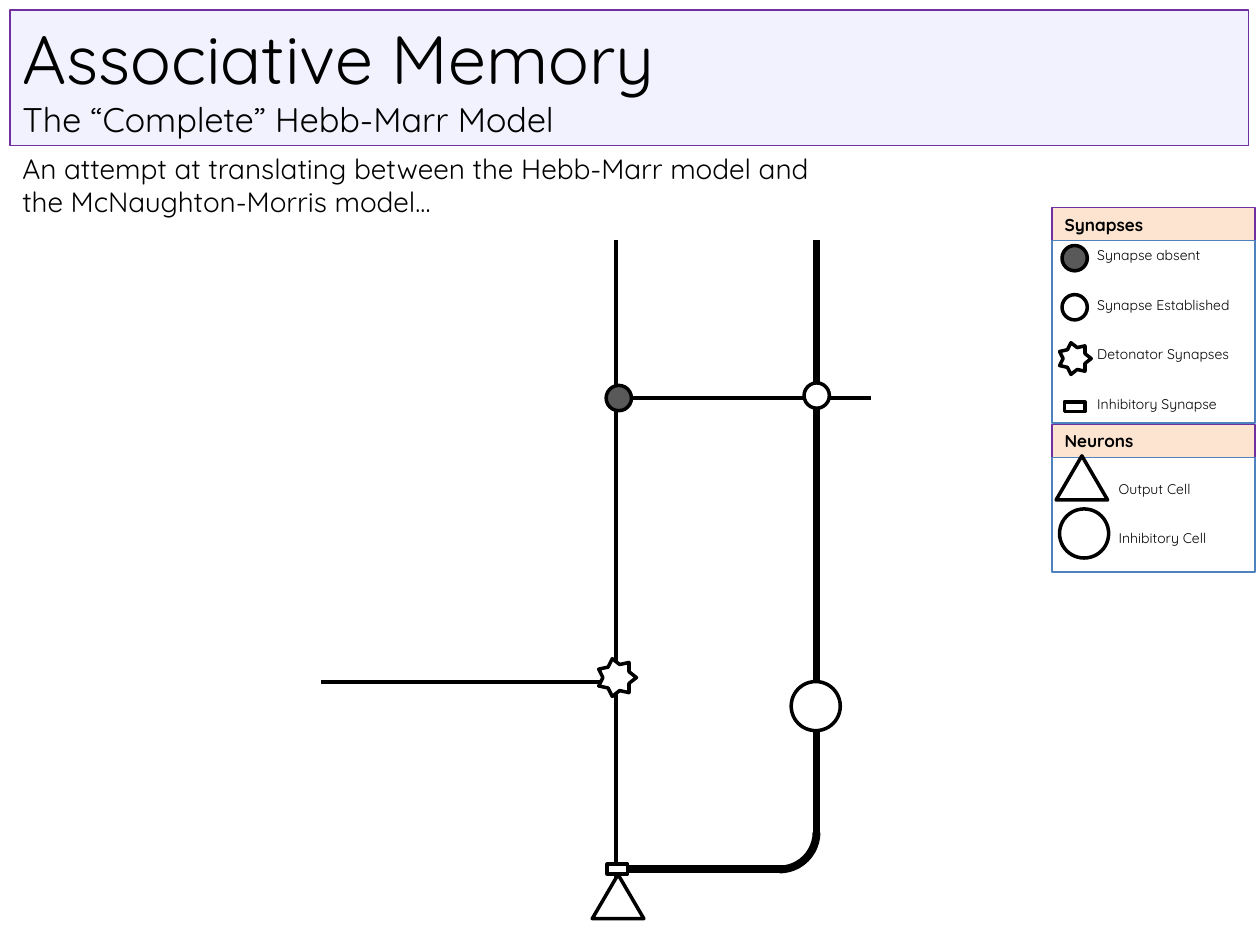
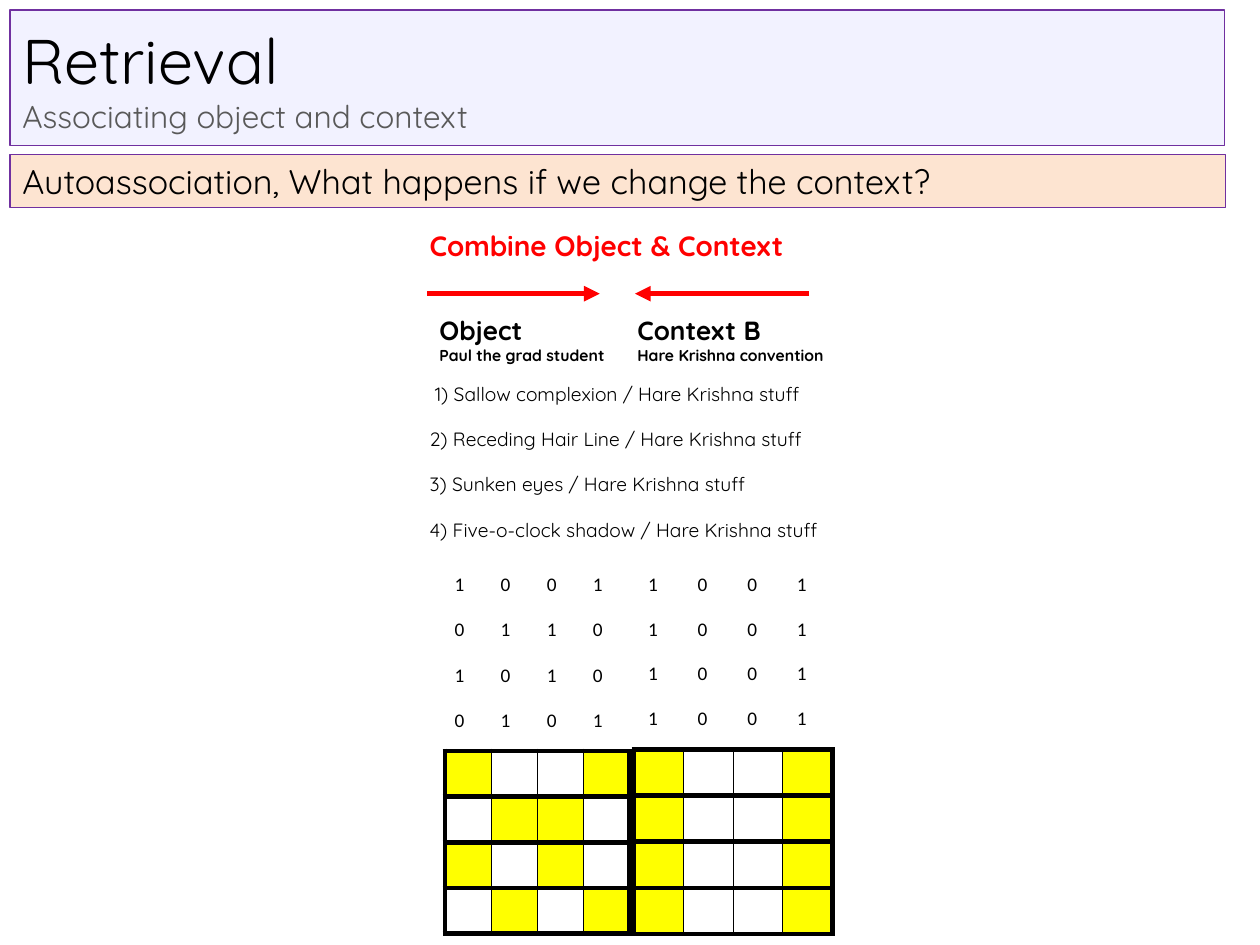
from lxml import etree
from pptx import Presentation
from pptx.dml.color import RGBColor
from pptx.enum.shapes import MSO_CONNECTOR, MSO_SHAPE
from pptx.enum.text import MSO_ANCHOR, PP_ALIGN
from pptx.oxml.ns import qn
from pptx.util import Cm, Pt

BLACK = RGBColor(0x00, 0x00, 0x00)
WHITE = RGBColor(0xFF, 0xFF, 0xFF)
GREY = RGBColor(0x59, 0x59, 0x59)
RED = RGBColor(0xFF, 0x00, 0x00)
YELLOW = RGBColor(0xFF, 0xFF, 0x00)
PURPLE = RGBColor(0x70, 0x30, 0xA0)
BLUE = RGBColor(0x4F, 0x81, 0xBD)
LAVENDER = RGBColor(0xF2, 0xF2, 0xFF)
PEACH = RGBColor(0xFD, 0xE4, 0xD1)
FONT = "Quicksand"
DIGIT_FONT = "Calibri"

RECTANGLE = MSO_SHAPE.RECTANGLE
ELLIPSE = MSO_SHAPE.OVAL
STAR = MSO_SHAPE.STAR_7_POINT
TRIANGLE = MSO_SHAPE.ISOSCELES_TRIANGLE
ARC = MSO_SHAPE.ARC
STRAIGHT = MSO_CONNECTOR.STRAIGHT
TOP, MIDDLE, BOTTOM = MSO_ANCHOR.TOP, MSO_ANCHOR.MIDDLE, MSO_ANCHOR.BOTTOM
LEFT, RIGHT = PP_ALIGN.LEFT, PP_ALIGN.RIGHT


def draw(page, kind, place, fill, line, width):
    """Add a preset shape; place is left, top, width, height in cm."""
    shape = page.shapes.add_shape(kind, *map(Cm, place))
    shape.shadow.inherit = False
    if fill is None:
        shape.fill.background()
    else:
        shape.fill.solid()
        shape.fill.fore_color.rgb = fill
    shape.line.color.rgb = line
    shape.line.width = Pt(width)
    return shape


def write(frame, lines, frame_format, gap=0):
    """Fill a frame with (text, size, colour, bold) lines, gap points apart."""
    for name, value in {"word_wrap": True, **frame_format}.items():
        setattr(frame, name, value)
    for index, (text, size, colour, bold) in enumerate(lines):
        para = frame.add_paragraph() if index else frame.paragraphs[0]
        para.alignment = LEFT
        if index:
            para.space_before = Pt(gap)
        span = para.add_run()
        span.text = text
        span.font.color.rgb = colour
        for name, value in {"name": FONT, "size": Pt(size), "bold": bold}.items():
            setattr(span.font, name, value)


deck = Presentation()
deck.slide_width, deck.slide_height = Cm(25.4), Cm(19.05)
memory_page, retrieval_page = [
    deck.slides.add_slide(deck.slide_layouts[6]) for _ in range(2)]

# Axons, dendrites and the two arrows: x1, y1, x2, y2 in cm
connectors = {}
for name, page, ends, colour, width in [
    ("dendrite", memory_page, (12.42, 18.03, 12.42, 4.83), BLACK, 2.25),
    ("upper axon", memory_page, (17.55, 8.03, 12.22, 8.03), BLACK, 2.25),
    ("detonator axon", memory_page, (14.42 - 2, 13.74, 6.48, 13.74), BLACK, 2.25),
    ("inhibitory axon", memory_page, (16.46, 4.83, 16.46, 16.84), BLACK, 4.5),
    ("inhibitory output", memory_page, (12.65, 17.52, 15.8, 17.52), BLACK, 4.5),
    ("object arrow", retrieval_page, (8.61, 5.92, 12.09, 5.92), RED, 3),
    ("context arrow", retrieval_page, (16.31, 5.92, 12.8, 5.92), RED, 3),
]:
    connector = page.shapes.add_connector(STRAIGHT, *map(Cm, ends))
    connector.line.color.rgb = colour
    connector.line.width = Pt(width)
    properties = connector.element.spPr
    if name.endswith("arrow"):
        etree.SubElement(properties.find(qn("a:ln")), qn("a:tailEnd"), type="triangle")
    etree.SubElement(properties, qn("a:effectLst"))
    connectors[name] = connector

# Title bands, the question band and the legend headings
for page, place, fill, lines in [
    (memory_page, (0.2, 0.2, 24.97, 2.74), LAVENDER,
     [("Associative Memory", 39, BLACK, False),
      ("The “Complete” Hebb-Marr Model", 19.5, BLACK, False)]),
    (retrieval_page, (0.2, 0.2, 24.49, 2.74), LAVENDER,
     [("Retrieval", 36, BLACK, False),
      ("Associating object and context", 18, GREY, False)]),
    (retrieval_page, (0.2, 3.12, 24.51, 1.07), PEACH,
     [("Autoassociation, What happens if we change the context?", 19.5, BLACK, False)]),
    (memory_page, (21.21, 4.19, 4.09, 0.66), PEACH, [("Synapses", 9.8, BLACK, True)]),
    (memory_page, (21.21, 8.56, 4.09, 0.66), PEACH, [("Neurons", 9.8, BLACK, True)]),
]:
    band = draw(page, RECTANGLE, place, fill, PURPLE, 0.75)
    write(band.text_frame, lines, {"vertical_anchor": MIDDLE})

# Legend boxes
for place, left_inset, top_inset, entries in [
    ((21.21, 4.85, 4.09, 3.68), 0.91, 0.13,
     ["Synapse absent", "Synapse Established", "Detonator Synapses",
      "Inhibitory Synapse"]),
    ((21.21, 9.22, 4.09, 2.31), 1.34, 0.46, ["Output Cell", "Inhibitory Cell"]),
]:
    legend = draw(memory_page, RECTANGLE, place, None, BLUE, 0.75)
    write(legend.text_frame, [(entry, 8, BLACK, False) for entry in entries],
          {"vertical_anchor": TOP, "margin_left": Cm(left_inset),
           "margin_top": Cm(top_inset)}, gap=18.7)

# Bend of the inhibitory axon
bend = draw(memory_page, ARC, (14.96, 16.03, 1.5, 1.5), None, BLACK, 4.5)
bend.rotation = 90

# Each symbol stands once in the circuit and once in the legend
for kind, fill, width, height, in_circuit, in_legend, legend_scale in [
    (ELLIPSE, GREY, 0.51, 0.51, (12.22, 7.77), (21.41, 4.95), 1),
    (ELLIPSE, WHITE, 0.51, 0.51, (16.21, 7.72), (21.41, 5.94), 1),
    (STAR, WHITE, 0.76, 0.76, (12.07, 13.28), (21.36, 6.91), 0.84),
    (TRIANGLE, WHITE, 1.04, 0.89, (11.94, 17.63), (21.29, 9.19), 1),
    (ELLIPSE, WHITE, 0.99, 0.99, (15.95, 13.74), (21.36, 10.26), 1),
    (RECTANGLE, WHITE, 0.41, 0.2, (12.24, 17.42), (21.46, 8.1), 1),
]:
    for spot, scale in [(in_circuit, 1), (in_legend, legend_scale)]:
        symbol = draw(memory_page, kind, (*spot, width * scale, height * scale),
                      fill, BLACK, 2)
        if kind == STAR:
            symbol.rotation = 90
        if kind == RECTANGLE and spot == in_circuit:
            connectors["inhibitory output"].begin_connect(symbol, 3)

# Free text
for page, place, anchor, top_inset, gap, lines in [
    (memory_page, (0.2, 2.92, 16.99, 1.63), TOP, 0.13, 0,
     [("An attempt at translating between the Hebb-Marr model and "
       "the McNaughton-Morris model...", 16, BLACK, False)]),
    (retrieval_page, (8.41, 4.47, 8.05, 0.94), TOP, 0.13, 0,
     [("Combine Object & Context", 16, RED, True)]),
    (retrieval_page, (8.61, 6.3, 3.89, 1.07), MIDDLE, 0.13, 0,
     [("Object", 15, BLACK, True), ("Paul the grad student", 9, BLACK, True)]),
    (retrieval_page, (12.6, 6.3, 4.39, 1.07), MIDDLE, 0.13, 0,
     [("Context B", 15, BLACK, True), ("Hare Krishna convention", 9, BLACK, True)]),
    (retrieval_page, (8.41, 7.14, 8.79, 4.5), TOP, 0.56, 12.7,
     [(f"{label} / Hare Krishna stuff", 11, BLACK, False) for label in
      (" 1) Sallow complexion", "2) Receding Hair Line", "3) Sunken eyes",
       "4) Five-o-clock shadow")]),
]:
    box = page.shapes.add_textbox(*map(Cm, place))
    write(box.text_frame, lines,
          {"vertical_anchor": anchor, "margin_top": Cm(top_inset)}, gap)

# Bit patterns, first as digits and then as grids of lit cells
OBJECT_BITS = ["1001", "0110", "1010", "0101"]
CONTEXT_BITS = ["1001"] * 4
for bits, left, top, column_width, row_height, as_grid in [
    (OBJECT_BITS, 8.46, 11.1, 0.93, 0.92, False),
    (OBJECT_BITS, 8.97, 15.14, 0.93, 0.92, True),
    (CONTEXT_BITS, 12.29, 11.13, 1, 0.9, False),
    (CONTEXT_BITS, 12.78, 15.11, 1, 0.93, True),
]:
    table = retrieval_page.shapes.add_table(
        4, 4, Cm(left), Cm(top), Cm(4 * column_width), Cm(4 * row_height)).table
    table.first_row = table.horz_banding = False
    for row_index, row_bits in enumerate(bits):
        table.rows[row_index].height = Cm(row_height)
        for column_index, bit in enumerate(row_bits):
            table.columns[column_index].width = Cm(column_width)
            cell = table.cell(row_index, column_index)
            for name, value in {"margin_left": Cm(0.03), "margin_right": Cm(0.03),
                                "margin_top": Cm(0.03), "margin_bottom": 0,
                                "vertical_anchor": BOTTOM}.items():
                setattr(cell, name, value)
            if not as_grid:
                cell.fill.background()
                para = cell.text_frame.paragraphs[0]
                para.alignment = RIGHT
                span = para.add_run()
                span.text = bit
                span.font.name, span.font.size = DIGIT_FONT, Pt(11)
                span.font.color.rgb = BLACK
                continue
            # Heavy rules around the grid and between rows, hairlines between columns
            cell_properties = cell._tc.get_or_add_tcPr()
            for side, width in [("L", 0.5 if column_index > 0 else 3),
                                ("R", 0.5 if column_index < 3 else 3),
                                ("T", 3), ("B", 3)]:
                border = etree.SubElement(cell_properties, qn(f"a:ln{side}"),
                                          w=str(Pt(width)))
                paint = etree.SubElement(border, qn("a:solidFill"))
                etree.SubElement(paint, qn("a:srgbClr"), val=str(BLACK))
            cell.fill.solid()
            cell.fill.fore_color.rgb = YELLOW if bit == "1" else WHITE

deck.save("out.pptx")
